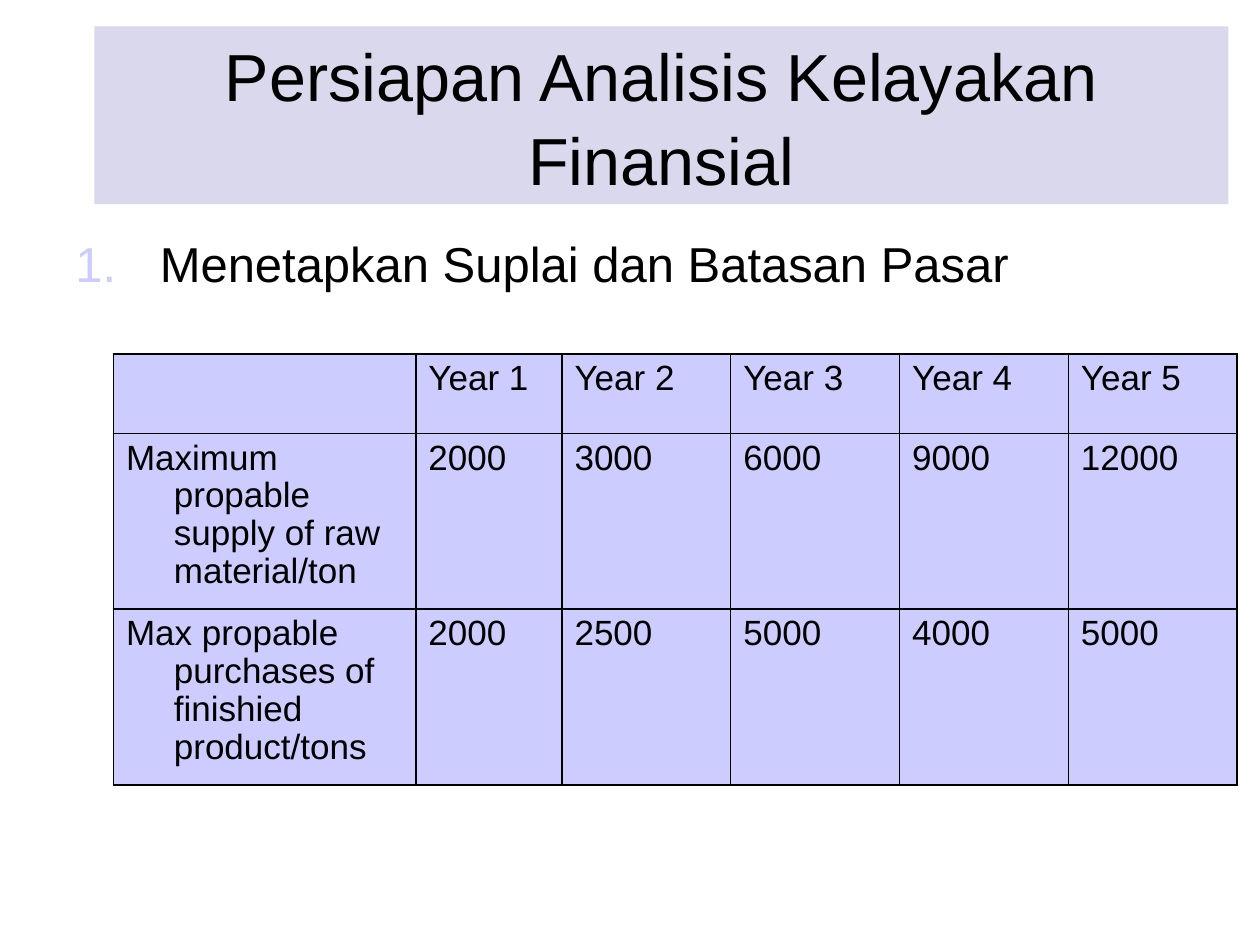
import pptx
import pptx.util
import pptx.dml.color
import pptx.enum.shapes
import pptx.enum.text
import pptx.oxml
import pptx.oxml.ns
from pptx.util import Inches

BLACK = pptx.dml.color.RGBColor(0x00, 0x00, 0x00)
TITLE_FILL = pptx.dml.color.RGBColor(0xD9, 0xD8, 0xEC)
LAVENDER = pptx.dml.color.RGBColor(0xCC, 0xCC, 0xFF)
NAMESPACE = pptx.oxml.ns.nsdecls("a")


def write_text(frame, text, size, align=pptx.enum.text.PP_ALIGN.LEFT,
               hanging=0, spacing=None, number_color=None):
    """Put one formatted paragraph in a text frame."""
    frame.word_wrap = True
    para = frame.paragraphs[0]
    para.alignment = align
    if spacing:
        para.line_spacing = spacing
    properties = para._p.get_or_add_pPr()
    if hanging:
        properties.set("marL", str(Inches(hanging)))
        properties.set("indent", str(-Inches(hanging)))
    if number_color:
        for xml in (
            f'<a:buClr {NAMESPACE}><a:srgbClr val="{number_color}"/></a:buClr>',
            f'<a:buFont {NAMESPACE} typeface="Arial"/>',
            f'<a:buAutoNum {NAMESPACE} type="arabicPeriod"/>',
        ):
            properties.append(pptx.oxml.parse_xml(xml))
    span = para.add_run()
    span.text = text
    span.font.name = "Arial"
    span.font.size = pptx.util.Pt(size)
    span.font.color.rgb = BLACK


deck = pptx.Presentation()
deck.slide_width = Inches(10)
deck.slide_height = Inches(7.5)
page = deck.slides.add_slide(deck.slide_layouts[6])

# Title band
title = page.shapes.add_shape(pptx.enum.shapes.MSO_SHAPE.RECTANGLE,
                              Inches(0.75), Inches(0.21), Inches(9), Inches(1.41))
title.shadow.inherit = False
title.fill.solid()
title.fill.fore_color.rgb = TITLE_FILL
title.line.fill.background()
title.text_frame.vertical_anchor = pptx.enum.text.MSO_ANCHOR.MIDDLE
write_text(title.text_frame, "Persiapan Analisis Kelayakan Finansial", 38,
           align=pptx.enum.text.PP_ALIGN.CENTER, spacing=1.05)

# Numbered heading
heading = page.shapes.add_textbox(Inches(0.5), Inches(1.75), Inches(8.97), Inches(0.62))
heading.text_frame.margin_top = Inches(0.1)
write_text(heading.text_frame, "Menetapkan Suplai dan Batasan Pasar", 28,
           hanging=0.67, number_color=LAVENDER)

# Supply and purchases table
rows = [
    ["", *(f"Year {year}" for year in range(1, 6))],
    ["Maximum propable supply of raw material/ton", 2000, 3000, 6000, 9000, 12000],
    ["Max propable purchases of finishied product/tons", 2000, 2500, 5000, 4000, 5000],
]
widths = [2.4, 1.16] + [1.34] * 4
heights = [0.63, 1.34, 1.34]
table = page.shapes.add_table(len(rows), len(widths), Inches(0.9), Inches(2.81),
                              Inches(sum(widths)), Inches(sum(heights))).table
for column, width in zip(table.columns, widths):
    column.width = Inches(width)
for row, height in zip(table.rows, heights):
    row.height = Inches(height)

for row, values in zip(table.rows, rows):
    for cell, value in zip(row.cells, values):
        cell_properties = cell._tc.get_or_add_tcPr()
        for side in ("lnL", "lnR", "lnT", "lnB"):
            cell_properties.append(pptx.oxml.parse_xml(
                f'<a:{side} {NAMESPACE} w="{pptx.util.Pt(1)}"><a:solidFill>'
                f'<a:srgbClr val="{BLACK}"/></a:solidFill></a:{side}>'))
        cell.fill.solid()
        cell.fill.fore_color.rgb = LAVENDER
        if value:
            write_text(cell.text_frame, str(value), 20, hanging=0.38, spacing=0.97)

deck.save("out.pptx")
